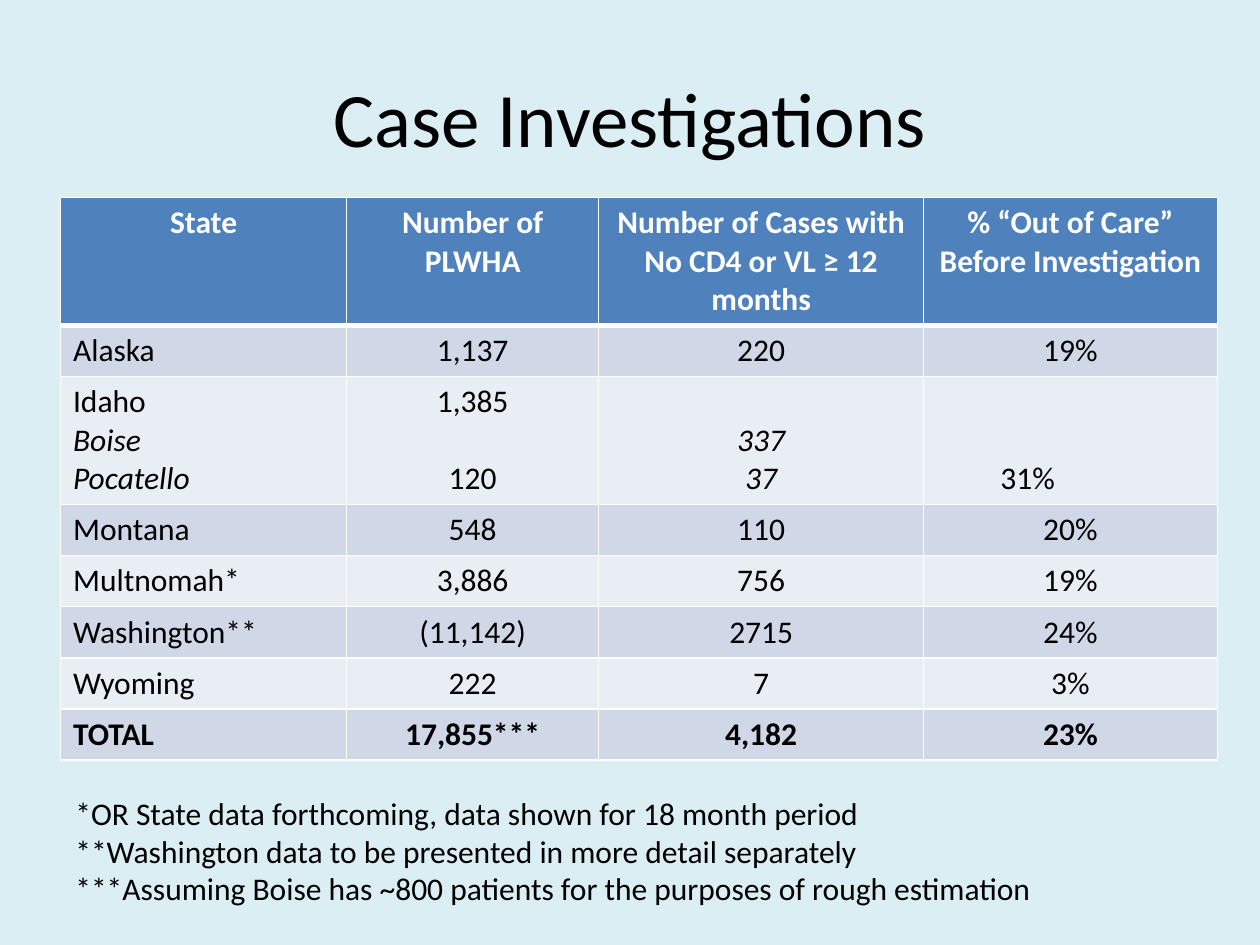
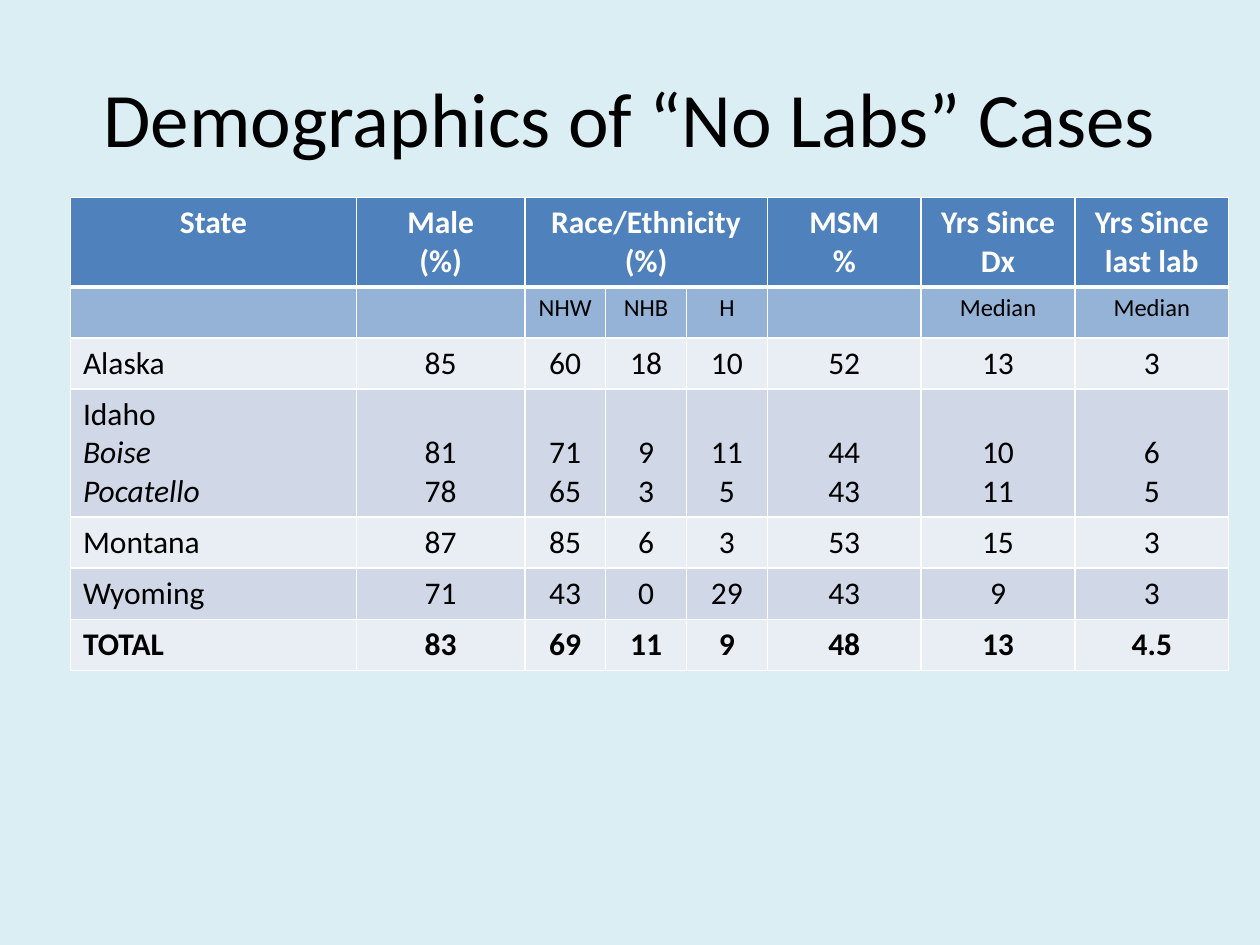
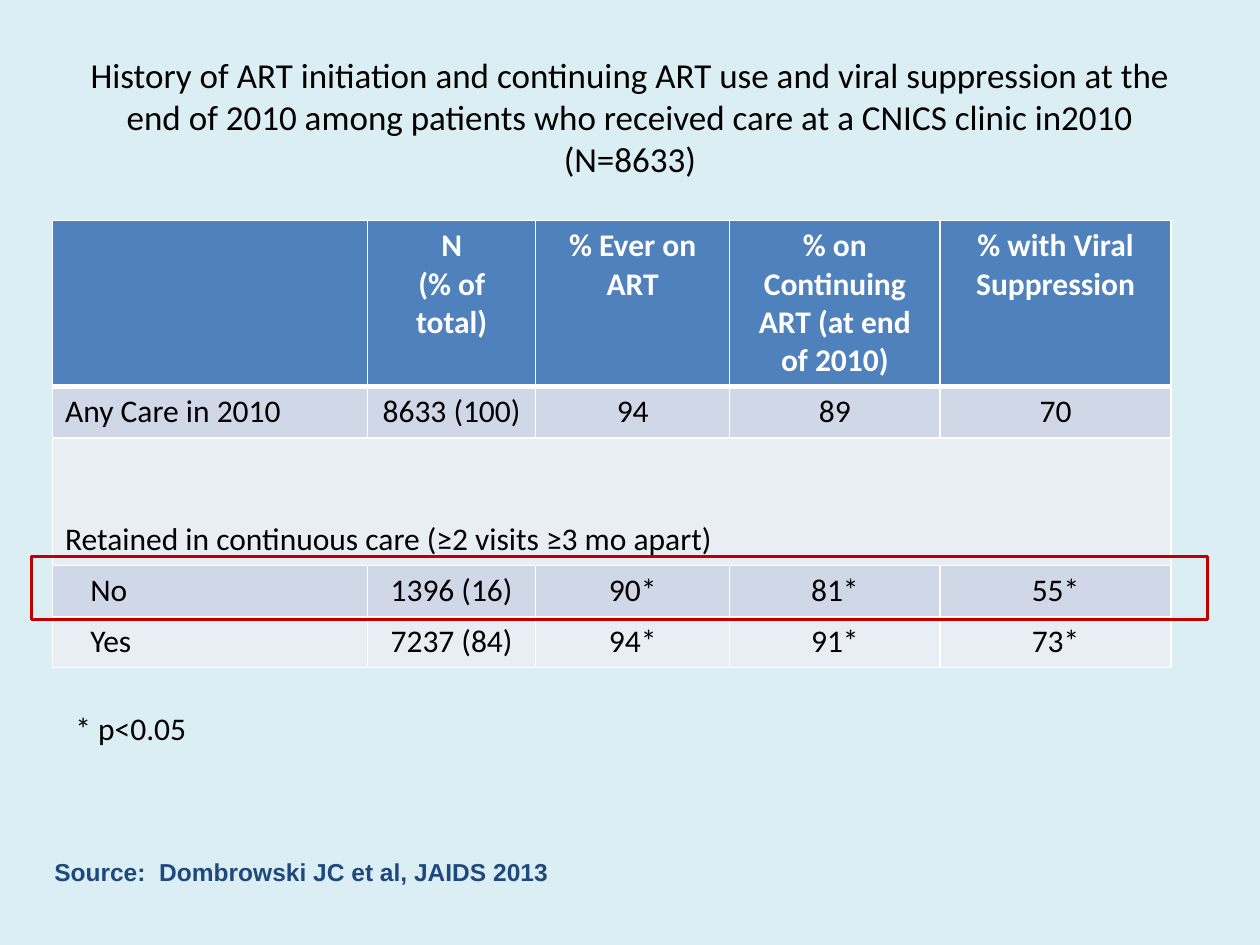
from lxml import etree
from pptx import Presentation
from pptx import util as u
from pptx.dml.color import RGBColor
from pptx.enum import shapes, text
from pptx.oxml import ns

Cm, Pt = u.Cm, u.Pt

HUES = {
    "back": "DBEEF4", "ink": "000000", "white": "FFFFFF", "head": "4F81BD",
    "sub": "95B3D7", "odd": "D0D8E8", "even": "E9EDF4",
    "source": "1F497D", "mark": "C00000",
}
FONT = "Calibri"
LINE, PAD = 0.775, 0.25   # height of a text line and of a cell's margins, cm
GAP = Pt(22)              # space that stands for one skipped line

# Content. In a cell "\n" parts lines, an empty line is a gap and
# "_" starts an italic line. Each row opens with its height in lines.
CASES = {
    "title": "Case Investigations", "size": 44,
    "at": (1.22, 3.98), "cols": (5.77, 5.08, 6.55, 5.92),
    "rows": [
        (3, "State", "Number of PLWHA",
         "Number of Cases with No CD4 or VL ≥ 12 months",
         "% “Out of Care” Before Investigation"),
        (1, "Alaska", "1,137", "220", "19%"),
        (3, "Idaho\n_Boise\n_Pocatello", "1,385\n\n120", "\n_337\n_37", "\n\n31%"),
        (1, "Montana", "548", "110", "20%"),
        (1, "Multnomah*", "3,886", "756", "19%"),
        (1, "Washington**", "(11,142)", "2715", "24%"),
        (1, "Wyoming", "222", "7", "3%"),
        (1, "TOTAL", "17,855***", "4,182", "23%"),
    ],
    "notes": ["*OR State data forthcoming, data shown for 18 month period",
              "**Washington data to be presented in more detail separately",
              "***Assuming Boise has ~800 patients for the purposes of rough estimation"],
    "note_at": (1.27, 15.88, 23.06, 2.57),
}
GROUPS = {
    "title": "Demographics of “No Labs” Cases", "size": 44,
    "at": (1.42, 3.98), "cols": (5.77, 3.39) + (1.63,) * 3 + (3.1,) * 3,
    "spans": [(0, 2, 4)], "sub": 1,
    "rows": [
        (2, "State", "Male\n(%)", "Race/Ethnicity\n(%)", "", "", "MSM\n%",
         "Yrs Since Dx", "Yrs Since last lab"),
        (1, "", "", "NHW", "NHB", "H", "", "Median", "Median"),
        (1, "Alaska", "85", "60", "18", "10", "52", "13", "3"),
        (3, "Idaho\n_Boise\n_Pocatello", "\n81\n78", "\n71\n65", "\n9\n3",
         "\n11\n5", "\n44\n43", "\n10\n11", "\n6\n5"),
        (1, "Montana", "87", "85", "6", "3", "53", "15", "3"),
        (1, "Wyoming", "71", "43", "0", "29", "43", "9", "3"),
        (1, "TOTAL", "83", "69", "11", "9", "48", "13", "4.5"),
    ],
}
CARE = {
    "title": "History of ART initiation and continuing ART use and viral "
             "suppression at the end of 2010 among patients who received care "
             "at a CNICS clinic in2010 (N=8633)", "size": 20,
    "at": (1.06, 4.44), "cols": (6.35, 3.39, 3.91, 4.24, 4.66),
    "spans": [(2, 0, 4)],
    "rows": [
        (4, "", "N\n(% of total)", "% Ever on ART",
         "% on Continuing ART (at end of 2010)", "% with Viral Suppression"),
        (1, "Any Care in 2010", "8633 (100)", "94", "89", "70"),
        (3, "\n\nRetained in continuous care (≥2 visits ≥3 mo apart)", "", "", "", ""),
        (1, "No", "1396 (16)", "90*", "81*", "55*"),
        (1, "Yes", "7237 (84)", "94*", "91*", "73*"),
    ],
    "notes": ["* p<0.05"], "note_at": (1.27, 14.17, 21.59, 1.07),
}
SOURCE = "Source:  Dombrowski JC et al, JAIDS 2013"


def hue(name):
    return RGBColor.from_string(HUES[name])


def box(dims):
    return [Cm(d) for d in dims]


def add_run(para, words, size=18, ink="ink", bold=False, slant=False, face=FONT):
    run = para.add_run()
    run.text = words
    font = run.font
    font.name, font.size, font.bold, font.italic = face, Pt(size), bold, slant
    font.color.rgb = hue(ink)


def write(frame, lines, align, **look):
    """Fill a frame line by line, turning inner empty lines into spacing."""
    first, skip = True, 0
    for line in lines:
        if not line:
            skip += 1
            continue
        para = frame.paragraphs[0] if first else frame.add_paragraph()
        if skip and not first:
            para.space_before = GAP * skip
        para.alignment = align
        add_run(para, line.lstrip("_"), slant=line.startswith("_"), **look)
        first, skip = False, 0


def edge(cell, **widths):
    """White borders, in points, for sides L, R, T and B."""
    props = cell._tc.get_or_add_tcPr()
    for side in "LRTB":
        line = etree.SubElement(props, ns.qn("a:ln" + side),
                                w=str(Pt(widths.get(side, 1))))
        fill = etree.SubElement(line, ns.qn("a:solidFill"))
        etree.SubElement(fill, ns.qn("a:srgbClr"), val=HUES["white"])


def add_grid(slide, deck):
    rows, cols = deck["rows"], deck["cols"]
    highs = [PAD + LINE * row[0] for row in rows]
    grid = slide.shapes.add_table(len(rows), len(cols), *box(deck["at"]),
                                  Cm(sum(cols)), Cm(sum(highs))).table
    for col, wide in zip(grid.columns, cols):
        col.width = Cm(wide)
    for r, (_, *cells) in enumerate(rows):
        grid.rows[r].height = Cm(highs[r])
        sub = r == deck.get("sub")
        band = "head" if r == 0 else "sub" if sub else ("even", "odd")[r % 2]
        for c, words in enumerate(cells):
            cell = grid.cell(r, c)
            edge(cell, **({"B": 3} if r == 0 else {"T": 3} if r == 1 else {}))
            cell.fill.solid()
            cell.fill.fore_color.rgb = hue(band)
            if words.startswith("\n"):
                cell.vertical_anchor = text.MSO_ANCHOR.BOTTOM
            left = c == 0 and r > 0
            write(cell.text_frame, words.split("\n"),
                  text.PP_ALIGN.LEFT if left else text.PP_ALIGN.CENTER,
                  size=14 if sub else 18, ink="white" if r == 0 else "ink",
                  bold=r == 0 or cells[0] == "TOTAL")
    for r, start, end in deck.get("spans", []):
        grid.cell(r, start).merge(grid.cell(r, end))
    return grid


def add_page(show, deck, layout=5):
    slide = show.slides.add_slide(show.slide_layouts[layout])
    # Title
    head = slide.shapes.title
    head.left, head.top, head.width, head.height = box((1.27, 0.76, 22.86, 3.18))
    head.text_frame.vertical_anchor = text.MSO_ANCHOR.MIDDLE
    write(head.text_frame, [deck["title"]], text.PP_ALIGN.CENTER, size=deck["size"])
    # Table and notes
    grid = add_grid(slide, deck)
    if "notes" in deck:
        frame = slide.shapes.add_textbox(*box(deck["note_at"])).text_frame
        frame.word_wrap = True
        write(frame, deck["notes"], text.PP_ALIGN.LEFT)
    return slide, grid


def add_source(slide):
    body = slide.placeholders[1]
    body.left, body.top, body.width, body.height = box((0.84, 17.15, 20.5, 0.89))
    frame = body.text_frame
    frame.auto_size = text.MSO_AUTO_SIZE.NONE
    write(frame, [SOURCE], text.PP_ALIGN.LEFT, size=14, ink="source",
          bold=True, face="Arial")
    props = frame.paragraphs[0]._p.get_or_add_pPr()
    props.set("marL", "0")
    props.set("indent", "0")
    etree.SubElement(props, ns.qn("a:buNone"))


def add_mark(slide):
    mark = slide.shapes.add_shape(shapes.MSO_SHAPE.RECTANGLE,
                                  *box((0.64, 11.22, 23.7, 1.27)))
    mark.shadow.inherit = False
    mark.fill.background()
    mark.line.color.rgb = hue("mark")
    mark.line.width = Pt(2)


def main():
    show = Presentation()
    show.slide_width, show.slide_height = Cm(25.4), Cm(19.05)
    back = show.slide_master.background.fill
    back.solid()
    back.fore_color.rgb = hue("back")

    # Case counts, with the Idaho share set left of centre
    _, grid = add_page(show, CASES)
    grid.cell(2, 3).margin_right = Cm(1.98)

    # Demographics
    add_page(show, GROUPS)

    # Care history, with indented answers and the marked row
    slide, grid = add_page(show, CARE, layout=1)
    for r in (3, 4):
        grid.cell(r, 0).margin_left = Cm(0.76)
    add_source(slide)
    add_mark(slide)

    show.save("out.pptx")


if __name__ == "__main__":
    main()
